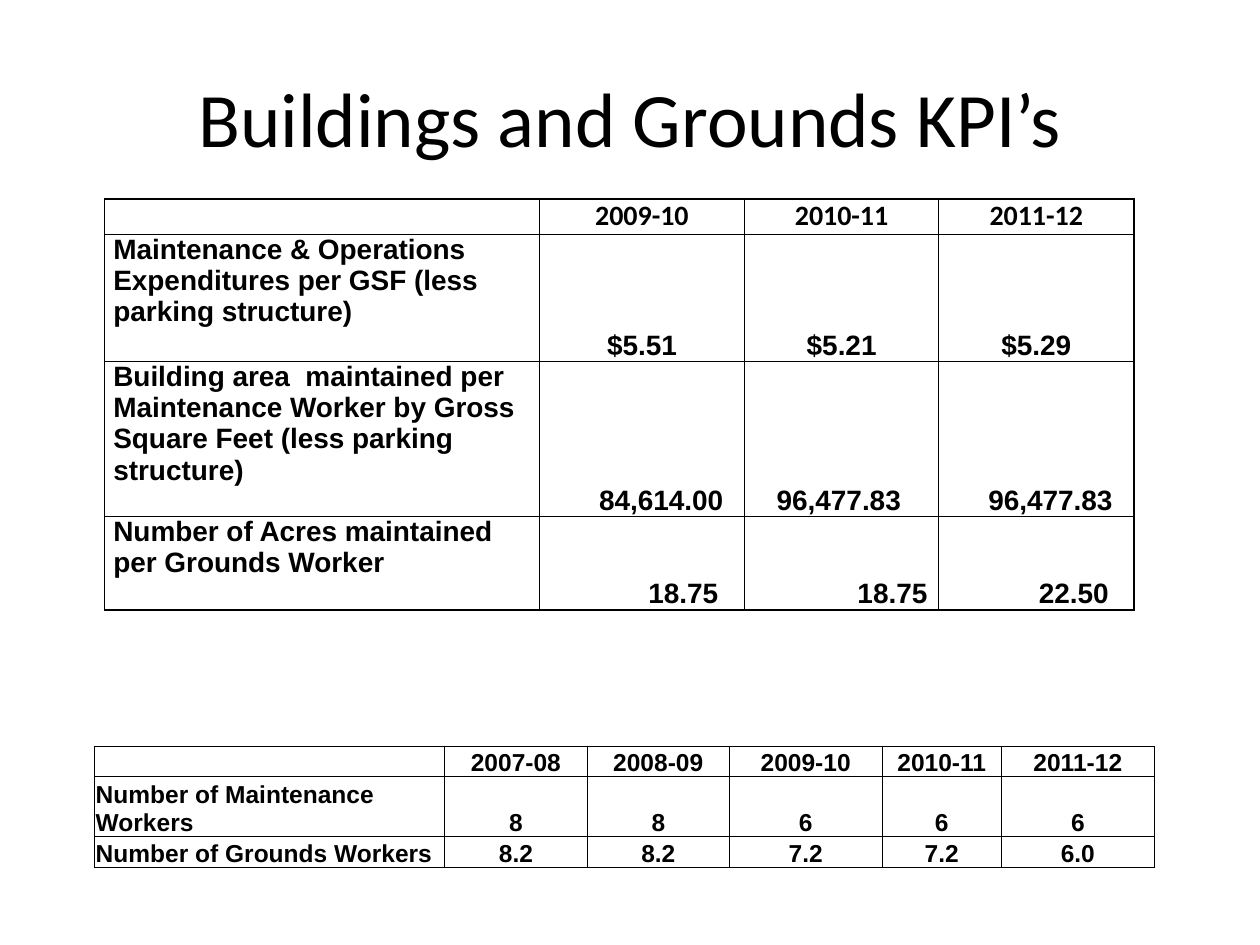
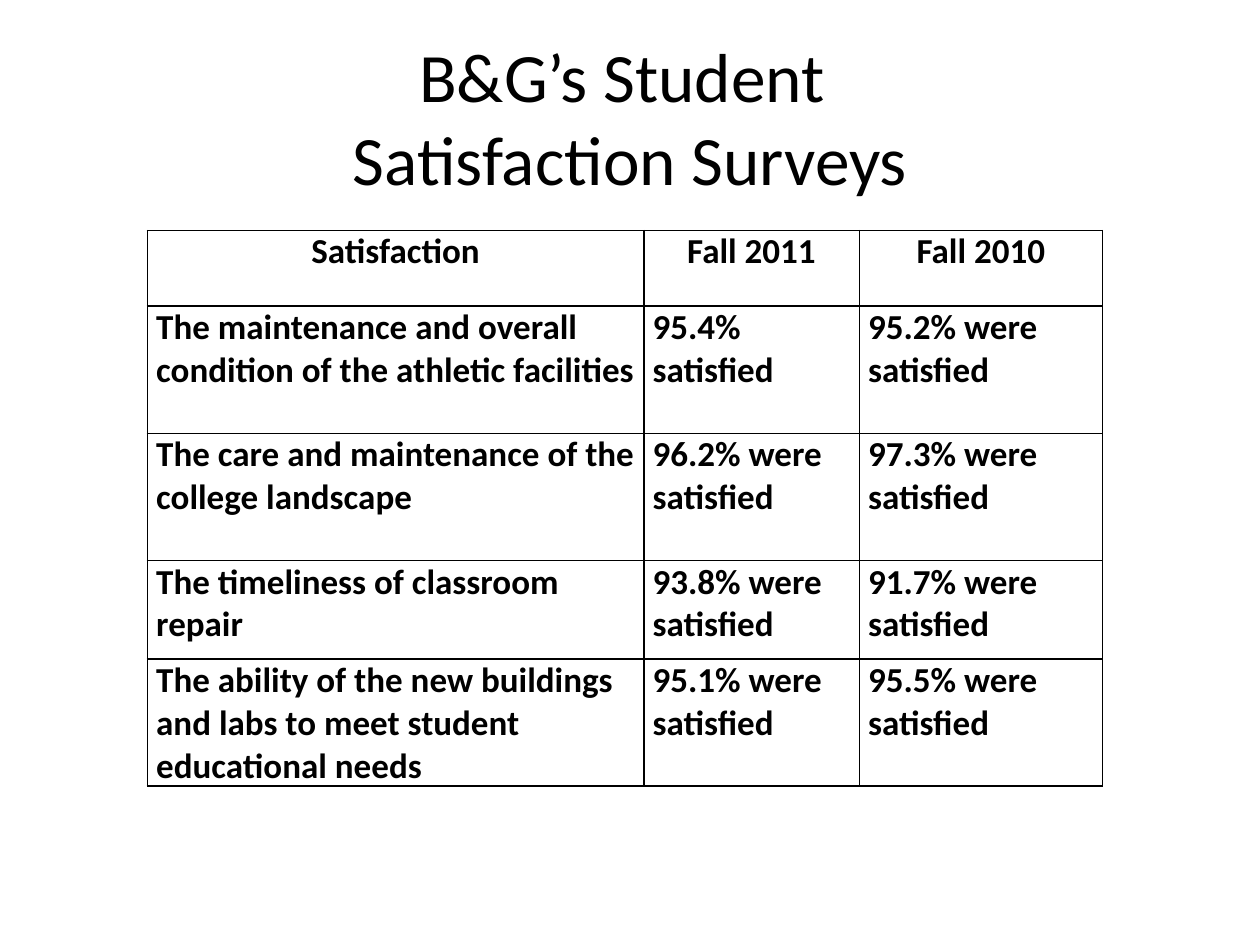
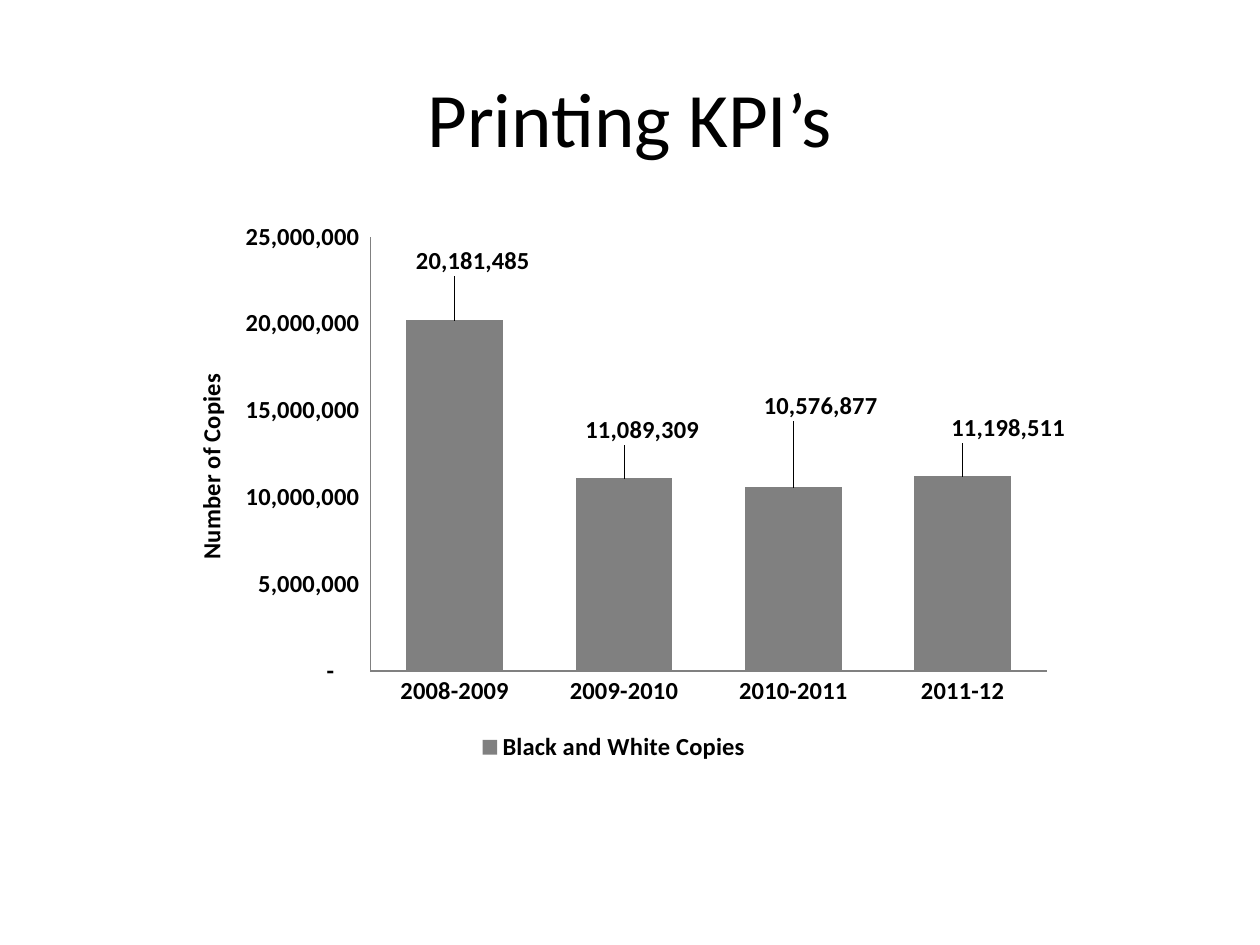
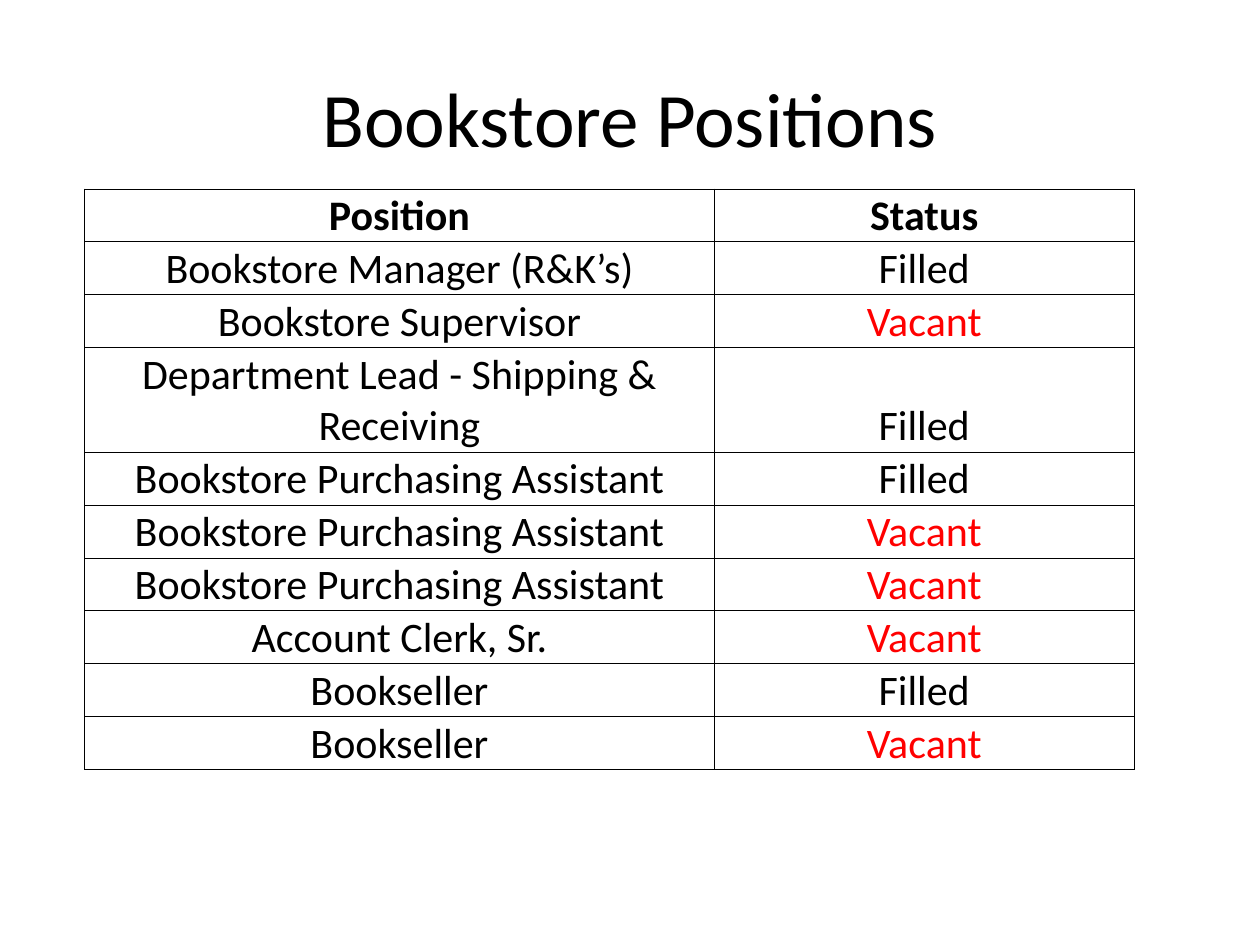
import dataclasses

import lxml.etree
import pptx
import pptx.chart.data
import pptx.dml.color
import pptx.enum.chart
import pptx.enum.text
import pptx.oxml
import pptx.oxml.ns
import pptx.util

Inches = pptx.util.Inches
Pt = pptx.util.Pt
ALIGN = pptx.enum.text.PP_ALIGN
ANCHOR = pptx.enum.text.MSO_ANCHOR
qn = pptx.oxml.ns.qn


@dataclasses.dataclass(frozen=True)
class Theme:
    ink: str = "000000"
    alert: str = "FF0000"
    bar: str = "808080"
    font: str = "Calibri"
    data_font: str = "Arial"
    title_size: float = 44
    long_title_size: float = 39.6
    chart_size: float = 14


THEME = Theme()


@dataclasses.dataclass
class TableStyle:
    """Text and border settings shared by all cells of one table."""
    size: float
    font: str = THEME.font
    border: float = 1
    margins: tuple = (0.07, 0, 0.07, 0)  # left, top, right, bottom
    anchor: object = ANCHOR.TOP


TIGHT = (0.01, 0.01, 0.01, 0)


def set_font(font, size, name=THEME.font, color=THEME.ink, bold=False):
    font.size = Pt(size)
    font.name = name
    font.bold = bold
    font.color.rgb = pptx.dml.color.RGBColor.from_string(color)


def add_page(deck, title, size=THEME.title_size):
    """Add a blank page with the shared title."""
    page = deck.slides.add_slide(deck.slide_layouts[6])
    box = page.shapes.add_textbox(Inches(0.5), Inches(0.3), Inches(9), Inches(1.25))
    frame = box.text_frame
    frame.word_wrap = True
    frame.vertical_anchor = ANCHOR.MIDDLE
    para = frame.paragraphs[0]
    para.text = title
    para.alignment = ALIGN.CENTER
    set_font(para.font, size)
    return page


# Tables

def set_borders(cell, width):
    properties = cell._tc.get_or_add_tcPr()
    for index, side in enumerate(("lnL", "lnR", "lnT", "lnB")):
        line = lxml.etree.Element(qn("a:" + side), w=str(Pt(width)))
        fill = lxml.etree.SubElement(line, qn("a:solidFill"))
        lxml.etree.SubElement(fill, qn("a:srgbClr"), val=THEME.ink)
        properties.insert(index, line)


def style_cell(cell, text, style, align, bold=True, color=THEME.ink):
    cell.fill.background()
    set_borders(cell, style.border)
    cell.margin_left, cell.margin_top, cell.margin_right, cell.margin_bottom = map(
        Inches, style.margins)
    cell.vertical_anchor = style.anchor
    para = cell.text_frame.paragraphs[0]
    if text:
        para.text = text
    para.alignment = align
    set_font(para.font, style.size, style.font, color, bold)


def add_grid(page, left, top, widths, heights, rows, style, body_align, bold_body=True):
    """Add a table with a centred header; body_align gives one alignment per column."""
    frame = page.shapes.add_table(len(rows), len(widths), Inches(left), Inches(top),
                                  Inches(sum(widths)), Inches(sum(heights)))
    table = frame.table
    table.first_row = table.horz_banding = False
    for column, width in zip(table.columns, widths):
        column.width = Inches(width)
    for row, height in zip(table.rows, heights):
        row.height = Inches(height)
    for row_index, texts in enumerate(rows):
        header = row_index == 0
        for column_index, text in enumerate(texts):
            style_cell(table.cell(row_index, column_index), text, style,
                       ALIGN.CENTER if header else body_align[column_index],
                       header or bold_body,
                       THEME.alert if text == "Vacant" else THEME.ink)
    return table


# Chart

def set_layout(parent, index, **values):
    """Give a chart part a manual layout, in fractions of the chart."""
    for old in parent.findall(qn("c:layout")):
        parent.remove(old)
    layout = lxml.etree.Element(qn("c:layout"))
    manual = lxml.etree.SubElement(layout, qn("c:manualLayout"))
    for name, value in values.items():
        lxml.etree.SubElement(manual, qn("c:" + name), val=str(value))
    parent.insert(index, layout)


def style_axis(axis):
    axis.has_major_gridlines = False
    axis.major_tick_mark = pptx.enum.chart.XL_TICK_MARK.NONE
    axis.format.line.color.rgb = pptx.dml.color.RGBColor.from_string(THEME.bar)
    set_font(axis.tick_labels.font, THEME.chart_size, bold=True)


def add_copies_chart(page, categories, name, values, label_offsets):
    number_format = '_(* #,##0_);_(* \\(#,##0\\);_(* "-"??_);_('
    data = pptx.chart.data.CategoryChartData(number_format=number_format)
    data.categories = categories
    data.add_series(name, values)
    chart = page.shapes.add_chart(
        pptx.enum.chart.XL_CHART_TYPE.COLUMN_CLUSTERED, Inches(1.25), Inches(1.67),
        Inches(7.25), Inches(4.42), data).chart
    set_font(chart.font, 10)
    chart.has_title = False
    chart.has_legend = True
    chart.legend.position = pptx.enum.chart.XL_LEGEND_POSITION.BOTTOM
    chart.legend.include_in_layout = False
    set_font(chart.legend.font, THEME.chart_size, bold=True)

    # Axes
    style_axis(chart.category_axis)
    axis = chart.value_axis
    style_axis(axis)
    axis.minimum_scale, axis.maximum_scale, axis.major_unit = 0, 25000000, 5000000
    axis.tick_labels.number_format = number_format
    axis.tick_labels.number_format_is_linked = False
    para = axis.axis_title.text_frame.paragraphs[0]
    para.text = "Number of Copies"
    set_font(para.font, THEME.chart_size, bold=True)

    # Bars and their labels
    plot = chart.plots[0]
    plot.gap_width = 75
    plot.vary_by_categories = False
    series = plot.series[0]
    series.format.fill.solid()
    series.format.fill.fore_color.rgb = pptx.dml.color.RGBColor.from_string(THEME.bar)
    labels = series.data_labels
    labels.show_value = True
    labels.number_format = number_format
    labels.number_format_is_linked = False
    set_font(labels.font, THEME.chart_size, bold=True)
    for index, (x, y) in enumerate(label_offsets):
        label = series.points[index].data_label
        label.position = pptx.enum.chart.XL_LABEL_POSITION.OUTSIDE_END
        set_font(label.font, THEME.chart_size, bold=True)
        set_layout(labels._element.findall(qn("c:dLbl"))[index], 1, x=x, y=y)

    # Places of the plot and the axis title
    plot_area = chart._chartSpace.find(".//" + qn("c:plotArea"))
    set_layout(plot_area, 0, layoutTarget="inner", xMode="edge", yMode="edge",
               x=0.233, y=0.047, w=0.742, h=0.78)
    set_layout(axis._element.find(qn("c:title")), 1, xMode="edge", yMode="edge",
               x=0.035, y=0.285)


# Pages

def build_grounds_page(deck):
    page = add_page(deck, "Buildings and Grounds KPI’s")
    years = ["2009-10", "2010-11", "2011-12"]
    rows = [
        ["", *years],
        ["Maintenance & Operations Expenditures per GSF (less parking structure)",
         "$5.51", "$5.21", "$5.29"],
        ["Building area  maintained per Maintenance Worker by Gross Square Feet "
         "(less parking structure)", "84,614.00", "96,477.83", "96,477.83"],
        ["Number of Acres maintained per Grounds Worker", "18.75", "18.75", "22.50"],
    ]
    table = add_grid(page, 0.83, 1.58, [3.45, 1.63, 1.54, 1.55], [0.28, 1.01, 1.23, 0.74],
                     rows, TableStyle(16, THEME.data_font), [ALIGN.LEFT] + [ALIGN.CENTER] * 3)
    # Year headings use the title font; figures sit at the cell bottom
    right_margins = {2: (0.17, 0.3, 0.17), 3: (0.21, 0.09, 0.2)}
    for column in range(1, 4):
        table.cell(0, column).text_frame.paragraphs[0].font.name = THEME.font
        for row in range(1, 4):
            cell = table.cell(row, column)
            cell.vertical_anchor = ANCHOR.BOTTOM
            if row in right_margins:
                cell.margin_right = Inches(right_margins[row][column - 1])
                cell.text_frame.paragraphs[0].alignment = ALIGN.RIGHT

    staff = [
        ["", "2007-08", "2008-09", *years],
        ["Number of Maintenance Workers", "8", "8", "6", "6", "6"],
        ["Number of Grounds Workers", "8.2", "8.2", "7.2", "7.2", "6.0"],
    ]
    add_grid(page, 0.75, 5.92, [2.78, 1.13, 1.13, 1.21, 0.95, 1.21], [0.23, 0.45, 0.23],
             staff, TableStyle(14, THEME.data_font, 0.5, TIGHT, ANCHOR.BOTTOM),
             [ALIGN.LEFT] + [ALIGN.CENTER] * 5)


def build_survey_page(deck):
    page = add_page(deck, "B&G’s Student \vSatisfaction Surveys", THEME.long_title_size)
    rows = [
        ["Satisfaction", "Fall 2011", "Fall 2010"],
        ["The maintenance and overall condition of the athletic facilities",
         "95.4% satisfied", "95.2% were satisfied"],
        ["The care and maintenance of the college landscape",
         "96.2% were satisfied", "97.3% were satisfied"],
        ["The timeliness of classroom repair",
         "93.8% were satisfied", "91.7% were satisfied"],
        ["The ability of the new buildings and labs to meet student educational needs",
         "95.1% were satisfied", "95.5% were satisfied"],
    ]
    add_grid(page, 1.17, 1.83, [3.94, 1.71, 1.93], [0.6, 1.01, 1.01, 0.78, 1.01],
             rows, TableStyle(20), [ALIGN.LEFT] * 3)


def build_printing_page(deck):
    page = add_page(deck, "Printing KPI’s")
    add_copies_chart(page, ["2008-2009", "2009-2010", "2010-2011", "2011-12"],
                     "Black and White Copies", [20181485, 11089309, 10576877, 11198511],
                     [(0.02, -0.07), (0.02, -0.05), (0.03, -0.11), (0.05, -0.05)])


def build_positions_page(deck):
    page = add_page(deck, "Bookstore Positions")
    rows = [
        ["Position", "Status"],
        ["Bookstore Manager (R&K’s)", "Filled"],
        ["Bookstore Supervisor", "Vacant"],
        ["Department Lead - Shipping & Receiving", "Filled"],
        ["Bookstore Purchasing Assistant", "Filled"],
        ["Bookstore Purchasing Assistant", "Vacant"],
        ["Bookstore Purchasing Assistant", "Vacant"],
        ["Account Clerk, Sr.", "Vacant"],
        ["Bookseller", "Filled"],
        ["Bookseller", "Vacant"],
    ]
    heights = [0.42] * 3 + [0.83] + [0.42] * 6
    add_grid(page, 0.67, 1.5, [5, 3.33], heights, rows,
             TableStyle(24, border=0.5, margins=TIGHT, anchor=ANCHOR.BOTTOM),
             [ALIGN.CENTER] * 2, bold_body=False)


def main():
    deck = pptx.Presentation()
    deck.slide_width, deck.slide_height = Inches(10), Inches(7.5)
    build_grounds_page(deck)
    build_survey_page(deck)
    build_printing_page(deck)
    build_positions_page(deck)
    deck.save("out.pptx")


if __name__ == "__main__":
    main()
